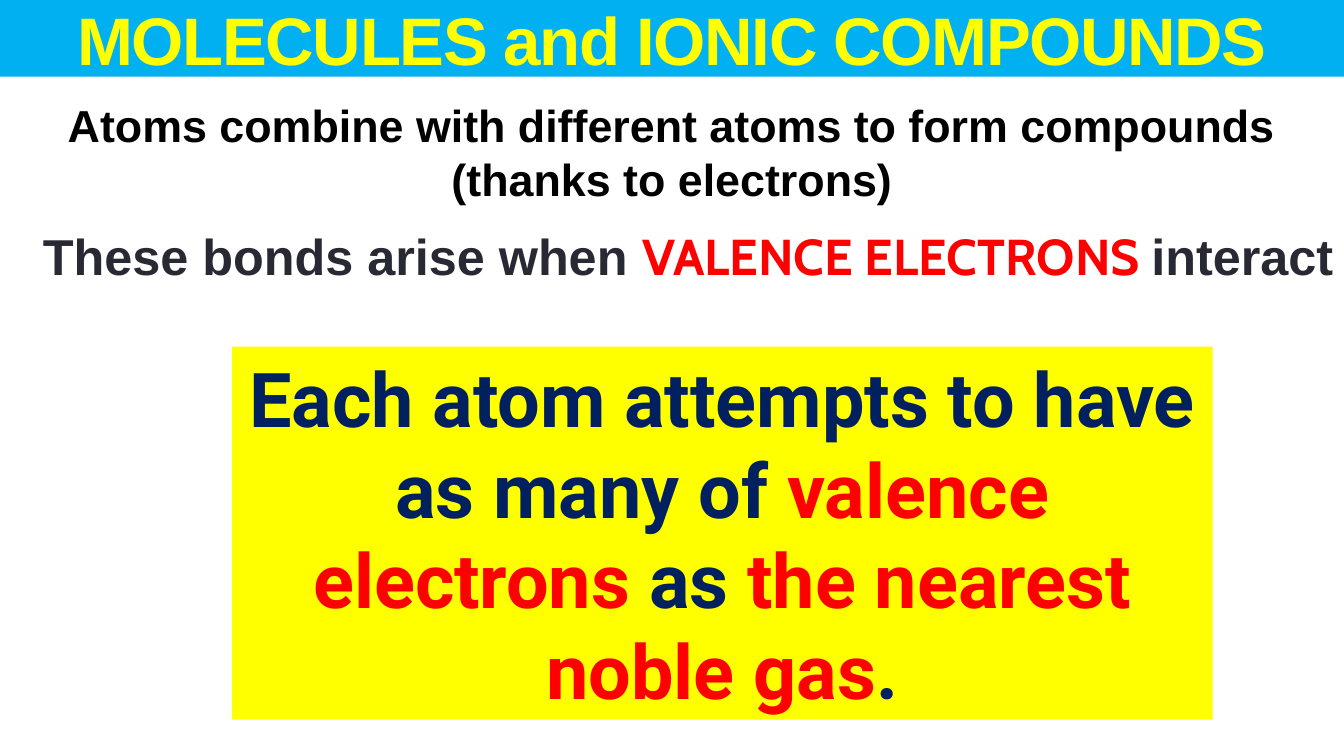
from dataclasses import dataclass

import lxml.etree
import pptx
import pptx.dml.color
import pptx.enum.shapes
import pptx.enum.text
import pptx.oxml.ns
import pptx.shapes.autoshape
import pptx.slide
import pptx.util

COLORS = {
    "sky": "00B0F0",
    "yellow": "FFFF00",
    "black": "000000",
    "charcoal": "292934",
    "red": "FF0000",
    "navy": "002060",
}


@dataclass(frozen=True)
class Phrase:
    text: str
    font: str
    color: str


@dataclass(frozen=True)
class Statement:
    left: float
    top: float
    width: float
    height: float
    size: float
    phrases: tuple[Phrase, ...]
    fill: str | None = None


HEADING = Statement(
    0, 0, 960, 54.72, 48,
    (Phrase("MOLECULES and IONIC COMPOUNDS", "Arial", "yellow"),),
    "sky",
)

STATEMENTS = (
    Statement(
        0, 66.24, 960, 79.2, 32,
        (Phrase("Atoms combine with different atoms to form compounds "
                "(thanks to electrons)", "Arial", "black"),),
    ),
    Statement(
        23.04, 156.96, 936.96, 79.2, 36,
        (
            Phrase("These bonds arise when ", "Arial", "charcoal"),
            Phrase("VALENCE ELECTRONS ", "Cabin", "red"),
            Phrase("interact", "Arial", "charcoal"),
        ),
    ),
    Statement(
        165.6, 247.68, 700.56, 266.4, 54,
        (
            Phrase("Each atom attempts to have as many of ", "Roboto", "navy"),
            Phrase("valence electrons", "Roboto", "red"),
            Phrase(" as ", "Roboto", "navy"),
            Phrase("the nearest noble gas", "Roboto", "red"),
            Phrase(".", "Roboto", "navy"),
        ),
        "yellow",
    ),
)


def rgb(color: str) -> pptx.dml.color.RGBColor:
    return pptx.dml.color.RGBColor.from_string(COLORS[color])


def write_statement(shape: pptx.shapes.autoshape.Shape, statement: Statement) -> None:
    shape.left = pptx.util.Pt(statement.left)
    shape.top = pptx.util.Pt(statement.top)
    shape.width = pptx.util.Pt(statement.width)
    shape.height = pptx.util.Pt(statement.height)
    if statement.fill:
        shape.fill.solid()
        shape.fill.fore_color.rgb = rgb(statement.fill)
    frame = shape.text_frame
    frame.word_wrap = True
    frame.auto_size = pptx.enum.text.MSO_AUTO_SIZE.NONE
    paragraph = frame.paragraphs[0]
    paragraph.alignment = pptx.enum.text.PP_ALIGN.CENTER
    for phrase in statement.phrases:
        run = paragraph.add_run()
        run.text = phrase.text
        run.font.name = phrase.font
        run.font.size = pptx.util.Pt(statement.size)
        run.font.bold = True
        run.font.color.rgb = rgb(phrase.color)


def add_heading(slide: pptx.slide.Slide) -> None:
    title = slide.shapes.title
    write_statement(title, HEADING)
    title.text_frame.vertical_anchor = pptx.enum.text.MSO_ANCHOR.MIDDLE
    title.text_frame.paragraphs[0].runs[0].font._element.set("spc", "-100")


def add_statement(slide: pptx.slide.Slide, statement: Statement) -> None:
    if statement.fill:
        shape = slide.shapes.add_shape(
            pptx.enum.shapes.MSO_SHAPE.RECTANGLE, 0, 0, 0, 0)
        shape.shadow.inherit = False
        shape.line.fill.background()
    else:
        shape = slide.shapes.add_textbox(0, 0, 0, 0)
    write_statement(shape, statement)
    shape.text_frame.vertical_anchor = pptx.enum.text.MSO_ANCHOR.TOP
    properties = shape.text_frame.paragraphs[0]._p.get_or_add_pPr()
    spacing = lxml.etree.SubElement(properties, pptx.oxml.ns.qn("a:spcBef"))
    lxml.etree.SubElement(spacing, pptx.oxml.ns.qn("a:spcPct"), val="20000")


def main() -> None:
    presentation = pptx.Presentation()
    presentation.slide_width = pptx.util.Pt(960)
    presentation.slide_height = pptx.util.Pt(540)
    slide = presentation.slides.add_slide(presentation.slide_layouts[5])
    add_heading(slide)
    for statement in STATEMENTS:
        add_statement(slide, statement)
    presentation.save("out.pptx")


if __name__ == "__main__":
    main()
